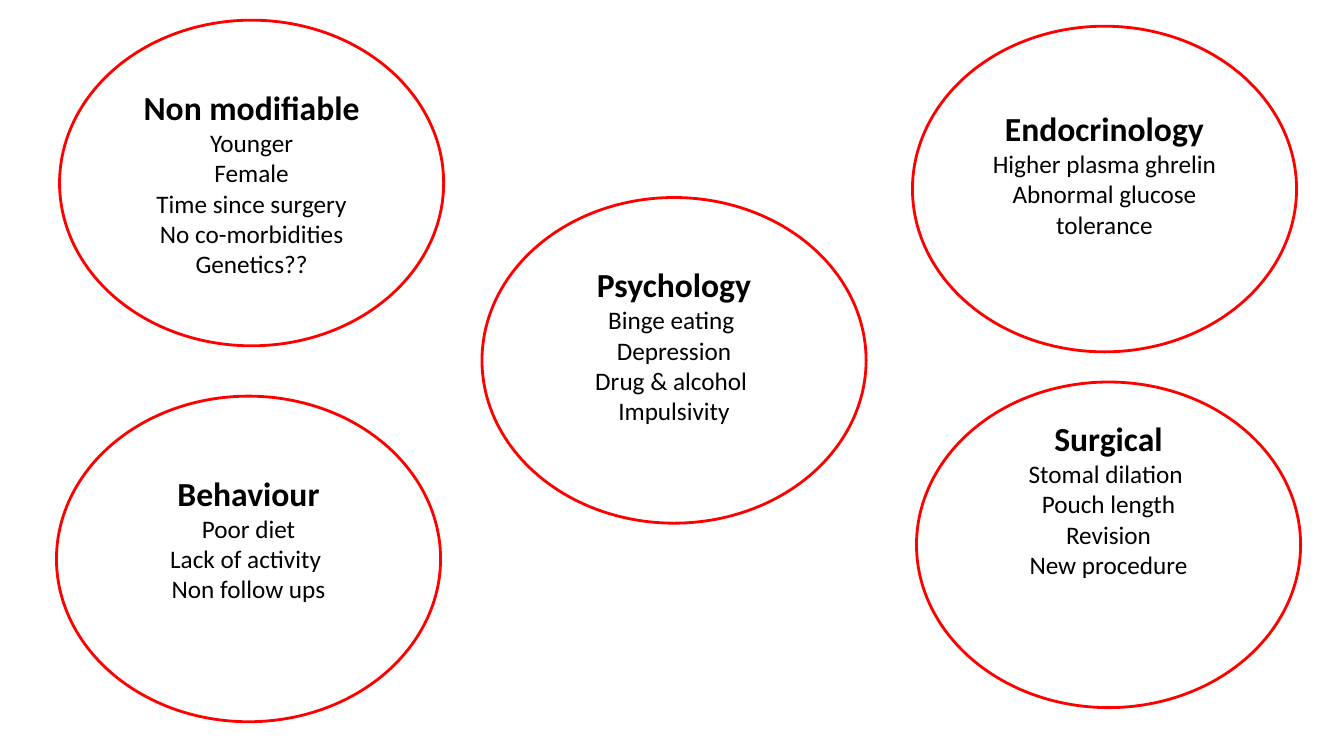
from dataclasses import dataclass

from pptx import Presentation
from pptx.dml.color import RGBColor as Rgb
from pptx.enum.shapes import MSO_SHAPE as Shape
from pptx.enum.text import MSO_ANCHOR as Anchor, PP_ALIGN as Align
from pptx.slide import Slide
from pptx.util import Inches, Pt

COLORS = {"paper": "FFFFFF", "ring": "FF0000", "ink": "000000"}
FONT = "Calibri"
WIDE, HIGH = Inches(13.33), Inches(7.5)
COL, ROW = WIDE / 100, HIGH / 100
SPAN, RISE = 28.58, 43.07
HEAD, BODY = 24, 18
LINE = 1.22
INSET = Inches(0.05)


@dataclass
class Factor:
    col: float
    row: float
    title: str
    items: list[str]
    lift: float = 0


FACTORS = [
    Factor(4.2, 52.4, "Behaviour",
           ["Poor diet", "Lack of activity ", "Non follow ups"], HEAD * LINE),
    Factor(67.89, 3.47, "Endocrinology",
           ["Higher plasma ghrelin Abnormal glucose tolerance"], BODY * LINE),
    Factor(4.43, 2.67, "Non modifiable",
           ["Younger", "Female", "Time since surgery", "No co-morbidities",
            "Genetics??"]),
    Factor(68.19, 50.53, "Surgical",
           ["Stomal dilation ", "Pouch length", "Revision", "New procedure"],
           3 * BODY * LINE),
    Factor(35.86, 26.13, "Psychology",
           ["Binge eating ", " Depression ", "Drug & alcohol ", "Impulsivity"],
           BODY * LINE),
]


def color(name: str) -> Rgb:
    return Rgb.from_string(COLORS[name])


def draw(slide: Slide, factor: Factor) -> None:
    oval = slide.shapes.add_shape(
        Shape.OVAL, round(factor.col * COL), round(factor.row * ROW),
        round(SPAN * COL), round(RISE * ROW))
    oval.shadow.inherit = False
    oval.fill.solid()
    oval.fill.fore_color.rgb = color("paper")
    oval.line.color.rgb = color("ring")
    oval.line.width = Pt(2)
    frame = oval.text_frame
    frame.word_wrap = True
    frame.vertical_anchor = Anchor.MIDDLE
    frame.margin_bottom = INSET + Pt(factor.lift)
    frame.text = "\n".join([factor.title, *factor.items])
    for index, para in enumerate(frame.paragraphs):
        para.alignment = Align.CENTER
        para.font.name = FONT
        para.font.size = Pt(BODY if index else HEAD)
        para.font.bold = index == 0
        para.font.color.rgb = color("ink")


def main() -> None:
    deck = Presentation()
    deck.slide_width, deck.slide_height = WIDE, HIGH
    slide = deck.slides.add_slide(deck.slide_layouts[6])
    for factor in FACTORS:
        draw(slide, factor)
    deck.save("out.pptx")


if __name__ == "__main__":
    main()
